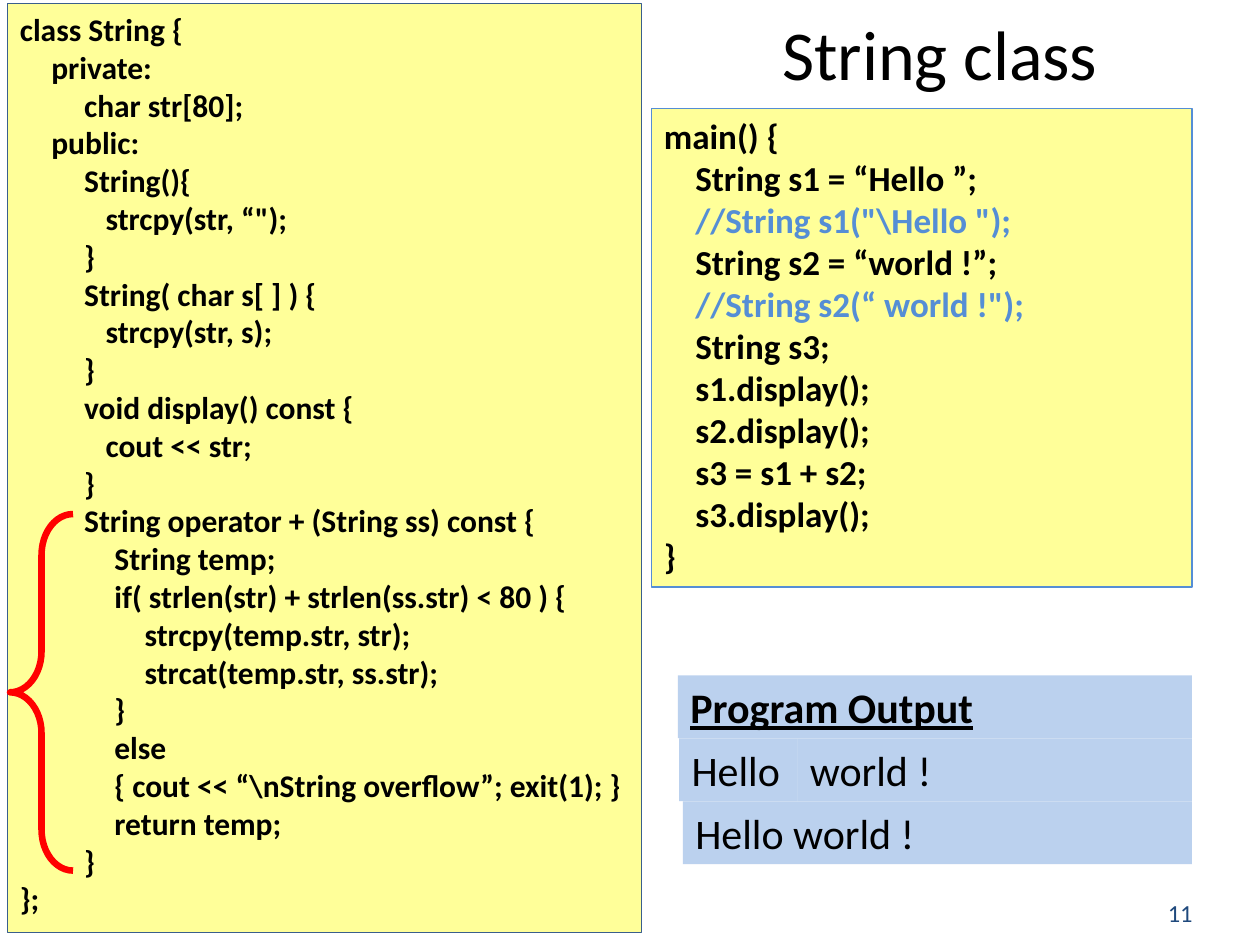
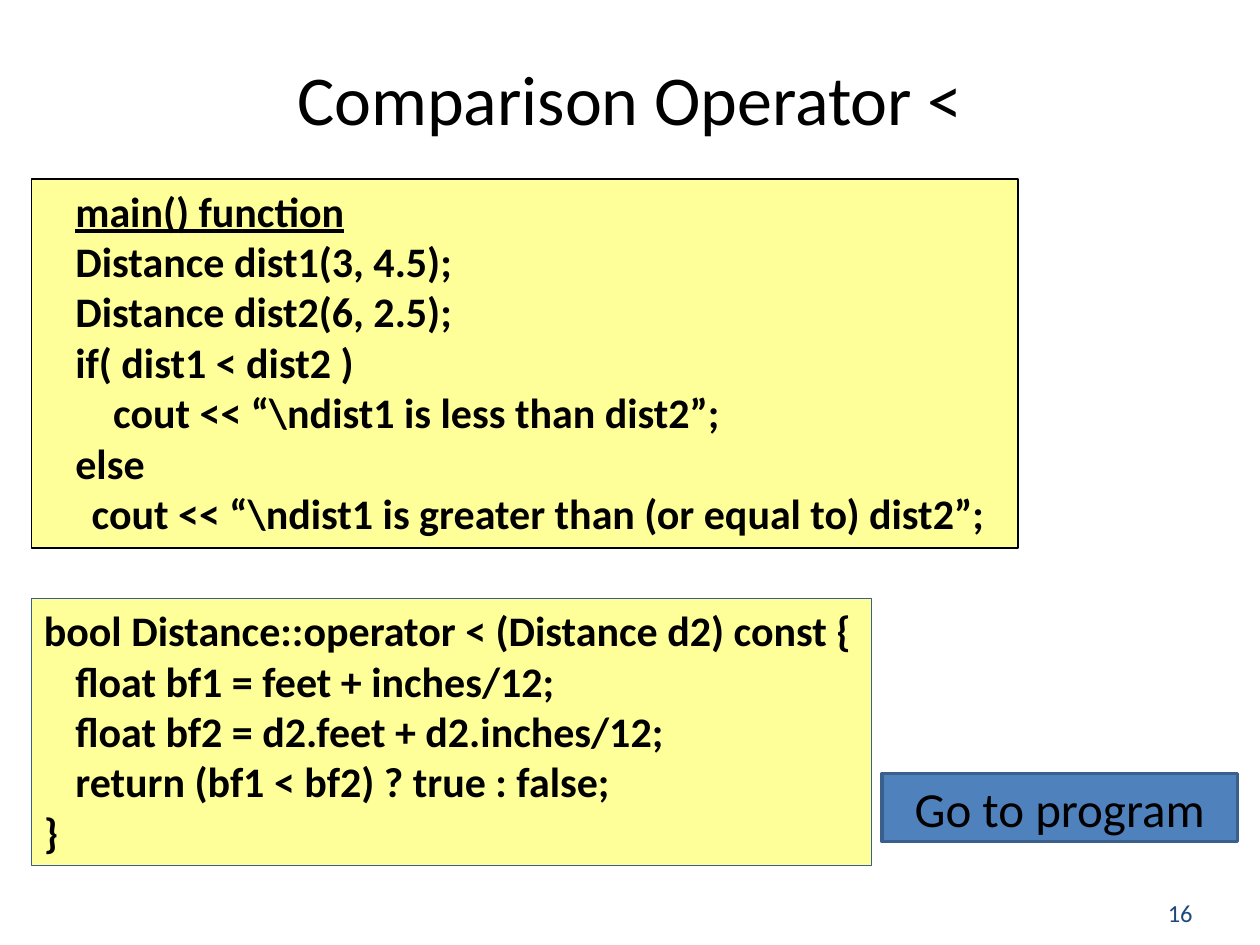
from lxml import etree
from pptx import Presentation
from pptx.dml.color import RGBColor
from pptx.enum.shapes import MSO_SHAPE
from pptx.enum.text import MSO_ANCHOR, PP_ALIGN
from pptx.oxml.ns import qn
from pptx.util import Inches, Pt

RECT, BRACE = MSO_SHAPE.RECTANGLE, MSO_SHAPE.LEFT_BRACE
TOP, MIDDLE = MSO_ANCHOR.TOP, MSO_ANCHOR.MIDDLE
LEFT, CENTER = PP_ALIGN.LEFT, PP_ALIGN.CENTER

FONT = "Calibri"
BLACK, YELLOW, RED = "000000", "FFFF00", "FF0000"
SKY, BLUE, EDGE, NAVY = "558ED5", "4F81BD", "3A5F8C", "1F497D"
PALE = 40  # opacity of the code and output boxes, in percent

# Each line of code: indent in inches, text, then any format of its own
CLASS = [
    (0, "class String {"),
    (0.25, "private:"),
    (0.51, "char str[80];"),
    (0.25, "public:"),
    (0.51, "String(){"),
    (0.68, "strcpy(str, “\");"),
    (0.51, "}"),
    (0.51, "String( char s[ ] ) {"),
    (0.68, "strcpy(str, s);"),
    (0.51, "}"),
    (0.51, "void display() const {"),
    (0.68, "cout << str;"),
    (0.51, "}"),
    (0.51, "String operator + (String ss) const {"),
    (0.75, "String temp;"),
    (0.75, "if( strlen(str) + strlen(ss.str) < 80 ) {"),
    (0.99, "strcpy(temp.str, str);"),
    (0.99, "strcat(temp.str, ss.str);"),
    (0.75, "}"),
    (0.75, "else"),
    (0.75, "{ cout << “\\nString overflow”; exit(1); }"),
    (0.75, "return temp;"),
    (0.51, "}"),
    (0, "};"),
]
MAIN = [
    (0, "main() {"),
    (0.25, "String s1 = “Hello ”;"),
    (0.25, "//String s1(\"\\Hello \");", {"color": SKY}),
    (0.25, "String s2 = “world !”;"),
    (0.25, "//String s2(“ world !\");", {"color": SKY}),
    (0.25, "String s3;"),
    (0.25, "s1.display();"),
    (0.25, "s2.display();"),
    (0.25, "s3 = s1 + s2;"),
    (0.25, "s3.display();"),
    (0, "}"),
]
LESS = [
    (0, "bool Distance::operator < (Distance d2) const {"),
    (0.25, "float bf1 = feet + inches/12;"),
    (0.25, "float bf2 = d2.feet + d2.inches/12;"),
    (0.25, "return (bf1 < bf2) ? true : false;"),
    (0, "}"),
]
TEST = [
    (0.25, "main() function", {"line": True}),
    (0.25, "Distance dist1(3, 4.5);"),
    (0.25, "Distance dist2(6, 2.5);"),
    (0.25, "if( dist1 < dist2 )"),
    (0.55, "cout << “\\ndist1 is less than dist2”;"),
    (0.25, "else"),
    (0.38, "cout << “\\ndist1 is greater than (or equal to) dist2”;"),
]
# Rows of program output: the left edge and text of each cell, and the format
OUTPUT = [
    ([(5.38, "Program Output")], {"bold": True, "line": True}),
    ([(5.39, "Hello"), (6.33, "world !")], {}),
    ([(5.42, "Hello world !")], {}),
]
OUT_TOP, OUT_RIGHT, OUT_ROW = 5.36, 9.46, 0.5


def rgb(color):
    return RGBColor.from_string(color)


def write(shape, text, size=24, color=BLACK, bold=False, line=False,
          align=LEFT, anchor=TOP):
    """Fill a shape with text: a string, or a list of indented lines."""
    frame = shape.text_frame
    frame.word_wrap = True
    frame.vertical_anchor = anchor
    rows = [(0, text)] if isinstance(text, str) else text
    for i, (indent, words, *own) in enumerate(rows):
        look = {"color": color, "line": line, **(own[0] if own else {})}
        para = frame.add_paragraph() if i else frame.paragraphs[0]
        para.alignment = align
        if indent:
            props = para._p.get_or_add_pPr()
            props.set("marL", str(Inches(indent)))
            props.set("indent", "0")
        run = para.add_run()
        run.text = words
        font = run.font
        font.name, font.size, font.bold = FONT, Pt(size), bold
        font.underline = look["line"]
        font.color.rgb = rgb(look["color"])


def draw(slide, at, kind=RECT, fill=None, alpha=None, edge=None, width=0.75):
    shape = slide.shapes.add_shape(kind, *map(Inches, at))
    shape.shadow.inherit = False
    if fill:
        shape.fill.solid()
        shape.fill.fore_color.rgb = rgb(fill)
        if alpha:
            tint = shape._element.spPr.find(".//" + qn("a:srgbClr"))
            etree.SubElement(tint, qn("a:alpha"), val=str(alpha * 1000))
    else:
        shape.fill.background()
    if edge:
        shape.line.color.rgb = rgb(edge)
        shape.line.width = Pt(width)
    else:
        shape.line.fill.background()
    return shape


def code(slide, at, lines, size=24, edge=EDGE):
    box = draw(slide, at, fill=YELLOW, alpha=PALE, edge=edge)
    write(box, lines, size=size, bold=True)


def start(deck, title, at, number):
    """Add a slide with its title and page number."""
    slide = deck.slides.add_slide(deck.slide_layouts[5])
    head = slide.shapes.title
    head.left, head.top, head.width, head.height = map(Inches, at)
    write(head, title, size=40, align=CENTER, anchor=MIDDLE)
    page = slide.shapes.add_textbox(*map(Inches, (9.17, 7.08, 0.67, 0.33)))
    write(page, str(number), size=14, color=NAVY, anchor=MIDDLE)
    return slide


def string_class(deck):
    slide = start(deck, "String class", (5.17, 0.03, 4.58, 0.78), 11)
    code(slide, (0.06, 0.03, 5.03, 7.37), CLASS, size=18)
    code(slide, (5.17, 0.86, 4.29, 3.8), MAIN, size=20, edge=SKY)
    brace = draw(slide, (0.08, 4.08, 0.5, 2.83), BRACE, edge=RED, width=3.75)
    brace.adjustments[0] = 0.65
    for i, (cells, look) in enumerate(OUTPUT):
        ends = [left for left, _ in cells[1:]] + [OUT_RIGHT]
        for (left, text), end in zip(cells, ends):
            at = (left, OUT_TOP + i * OUT_ROW, end - left, OUT_ROW)
            write(draw(slide, at, fill=SKY, alpha=PALE), text, **look)


def comparison(deck):
    slide = start(deck, "Comparison Operator <", (0.5, 0.38, 9, 0.78), 16)
    code(slide, (0.25, 4.75, 6.67, 2.12), LESS)
    code(slide, (0.25, 1.42, 7.83, 2.93), TEST, edge=BLACK)
    button = draw(slide, (7, 6.14, 2.82, 0.54), fill=BLUE, edge=EDGE, width=2)
    write(button, "Go to program", size=28, align=CENTER, anchor=MIDDLE)


def main():
    deck = Presentation()
    deck.slide_width, deck.slide_height = Inches(10), Inches(7.5)
    string_class(deck)
    comparison(deck)
    deck.save("out.pptx")


if __name__ == "__main__":
    main()
